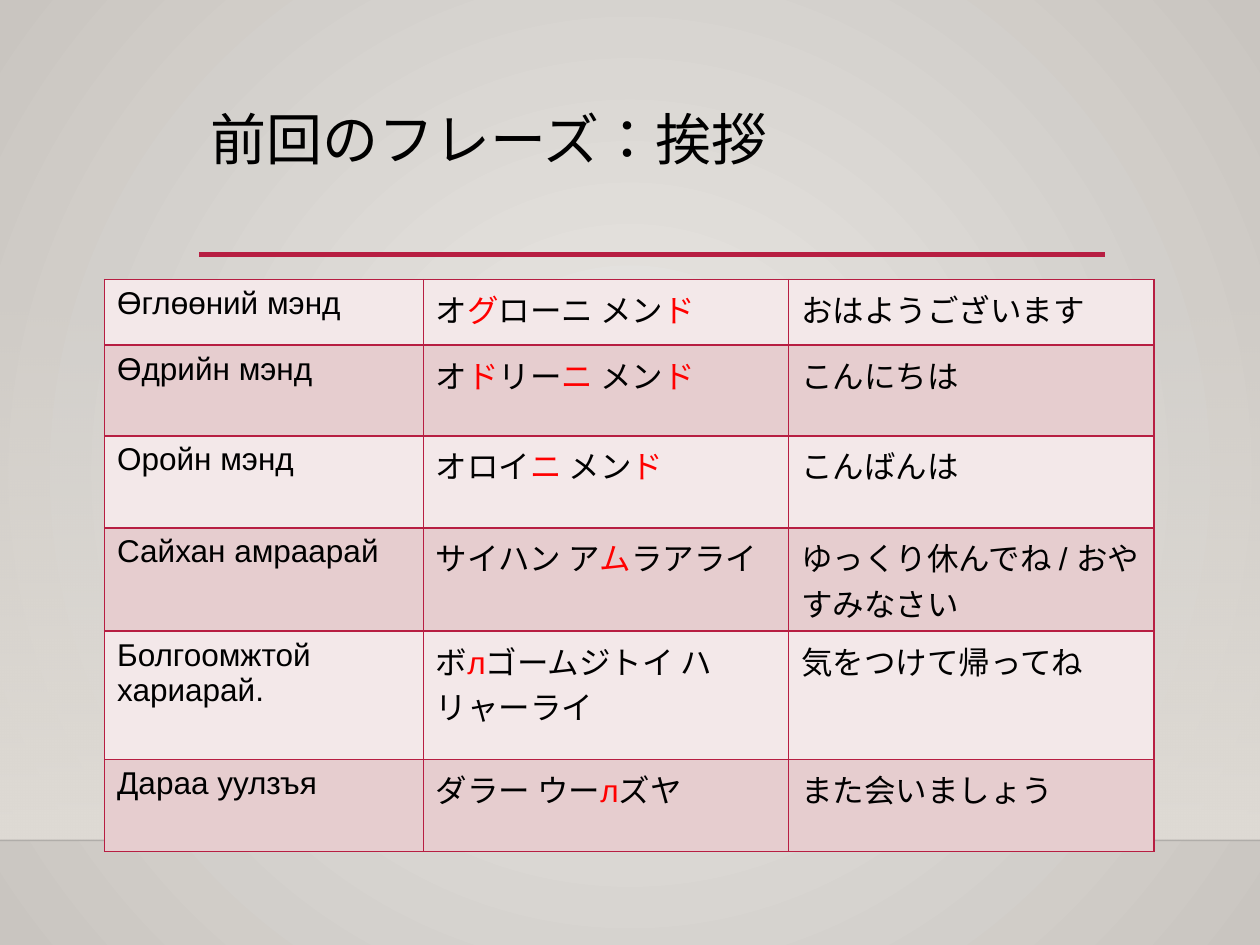
from lxml import etree
from pptx import Presentation, util as u
from pptx.dml import color
from pptx.enum import lang, shapes, text
from pptx.oxml import ns, parse_xml

WIDTH, HEIGHT = 10, 7.5
ACCENT, BLACK, RED = "B71E42", "000000", "FF0000"
BANDS = ("F3E8E9", "E6CDCF")
COLUMNS = (2.53, 2.9, 2.9)
ROWS = (0.52, 0.72, 0.73, 0.82, 1.02, 0.73)
PHRASES = (
    ("Өглөөний мэнд", "オ|グ|ローニ メン|ド", "おはようございます"),
    ("Өдрийн мэнд", "オ|ド|リー|ニ| メン|ド", "こんにちは"),
    ("Оройн мэнд", "オロイ|ニ| メン|ド", "こんばんは"),
    ("Сайхан амраарай", "サイハン ア|ム|ラアライ", "ゆっくり休んでね / おやすみなさい"),
    ("Болгоомжтой хариарай.", "ボ|л|ゴームジトイ ハリャーライ", "気をつけて帰ってね"),
    ("Дараа уулзъя", "ダラー ウー|л|ズヤ", "また会いましょう"),
)


def rgb(code):
    """Return the colour of a hex string."""
    return color.RGBColor.from_string(code)


def gradient(stops, direction):
    """Return a gradient fill of (position, colour, opacity) stops, in percent."""
    marks = "".join(
        f'<a:gs pos="{position * 1000}"><a:srgbClr val="{code}">'
        f'<a:alpha val="{opacity * 1000}"/></a:srgbClr></a:gs>'
        for position, code, opacity in stops)
    return parse_xml(f'<a:gradFill {ns.nsdecls("a")} rotWithShape="1">'
                     f'<a:gsLst>{marks}</a:gsLst>{direction}</a:gradFill>')


def set_gradient(fill, holder, stops, direction):
    """Give the holder of a fill a custom gradient."""
    fill.gradient()
    holder.replace(holder.find(ns.qn("a:gradFill")), gradient(stops, direction))


def add_rule(slide, left, top, width, code, weight, opacity=100):
    """Draw a horizontal line."""
    rule = slide.shapes.add_connector(
        shapes.MSO_CONNECTOR.STRAIGHT, u.Inches(left), u.Inches(top),
        u.Inches(left + width), u.Inches(top))
    rule.line.width = u.Pt(weight)
    rule.line.color.rgb = rgb(code)
    tint = rule.line._ln.find(".//" + ns.qn("a:srgbClr"))
    etree.SubElement(tint, ns.qn("a:alpha"), val=str(opacity * 1000))
    etree.SubElement(rule._element.spPr, ns.qn("a:effectLst"))


def add_run(paragraph, words, font, size, code):
    """Add one formatted run and return it."""
    run = paragraph.add_run()
    run.text = words
    run.font.name, run.font.size = font, u.Pt(size)
    run.font.color.rgb = rgb(code)
    return run


def add_backdrop(slide, top, height):
    """Paint the radial background and the floor with its horizon."""
    fill = slide.background.fill
    fill.gradient()
    holder = slide._element.cSld.bg.bgPr
    set_gradient(fill, holder, ((0, "EBE9E6", 100), (100, "C9C5C0", 100)),
                 '<a:path path="circle"><a:fillToRect l="50000" t="50000" '
                 'r="50000" b="50000"/></a:path>')
    floor = slide.shapes.add_shape(
        shapes.MSO_SHAPE.RECTANGLE, 0, u.Inches(top), u.Inches(WIDTH), u.Inches(height))
    floor.shadow.inherit = False
    floor.line.fill.background()
    set_gradient(floor.fill, floor._element.spPr,
                 ((0, "DFDBD5", 0), (100, "DFDBD5", 100)),
                 '<a:lin ang="5400000" scaled="0"/>')
    add_rule(slide, 0, top + height, WIDTH, "000001", 1, 20)


def add_heading(slide, left, top, width, height):
    """Place the title with the accent rule below it."""
    heading = slide.shapes.add_textbox(*map(u.Inches, (left, top, width, height)))
    frame = heading.text_frame
    frame.word_wrap = True
    frame.vertical_anchor = text.MSO_ANCHOR.TOP
    title = frame.paragraphs[0]
    title.line_spacing = 0.9
    run = add_run(title, "前回のフレーズ：挨拶", "Calibri", 32, BLACK)
    run.font.language_id = lang.MSO_LANGUAGE_ID.JAPANESE
    add_rule(slide, left + 0.01, top + height + 0.03, width, ACCENT, 2.5)


def add_borders(cell):
    """Outline a cell on all four sides."""
    properties = cell._tc.get_or_add_tcPr()
    for place, side in enumerate(("lnL", "lnR", "lnT", "lnB")):
        properties.insert(place, parse_xml(
            f'<a:{side} {ns.nsdecls("a")} w="12700"><a:solidFill>'
            f'<a:srgbClr val="{ACCENT}"/></a:solidFill></a:{side}>'))


def add_phrases(slide, left, top):
    """Place the banded phrase table, with every second part of a text in red."""
    table = slide.shapes.add_table(
        len(ROWS), len(COLUMNS), u.Inches(left), u.Inches(top),
        u.Inches(sum(COLUMNS)), u.Inches(sum(ROWS))).table
    table.first_row = False
    for column, width in zip(table.columns, COLUMNS):
        column.width = u.Inches(width)
    for number, (row, height, phrases) in enumerate(zip(table.rows, ROWS, PHRASES)):
        row.height = u.Inches(height)
        for cell, phrase in zip(row.cells, phrases):
            cell.fill.solid()
            cell.fill.fore_color.rgb = rgb(BANDS[number % 2])
            add_borders(cell)
            for part, words in enumerate(phrase.split("|")):
                add_run(cell.text_frame.paragraphs[0], words, "Arial", 18,
                        RED if part % 2 else BLACK)


def main():
    """Build the greeting slide."""
    deck = Presentation()
    deck.slide_width, deck.slide_height = u.Inches(WIDTH), u.Inches(HEIGHT)
    slide = deck.slides.add_slide(deck.slide_layouts[6])
    add_backdrop(slide, 2.2, 4.47)
    add_heading(slide, 1.57, 0.84, 7.19, 1.15)
    add_phrases(slide, 0.83, 2.22)
    deck.save("out.pptx")


if __name__ == "__main__":
    main()
